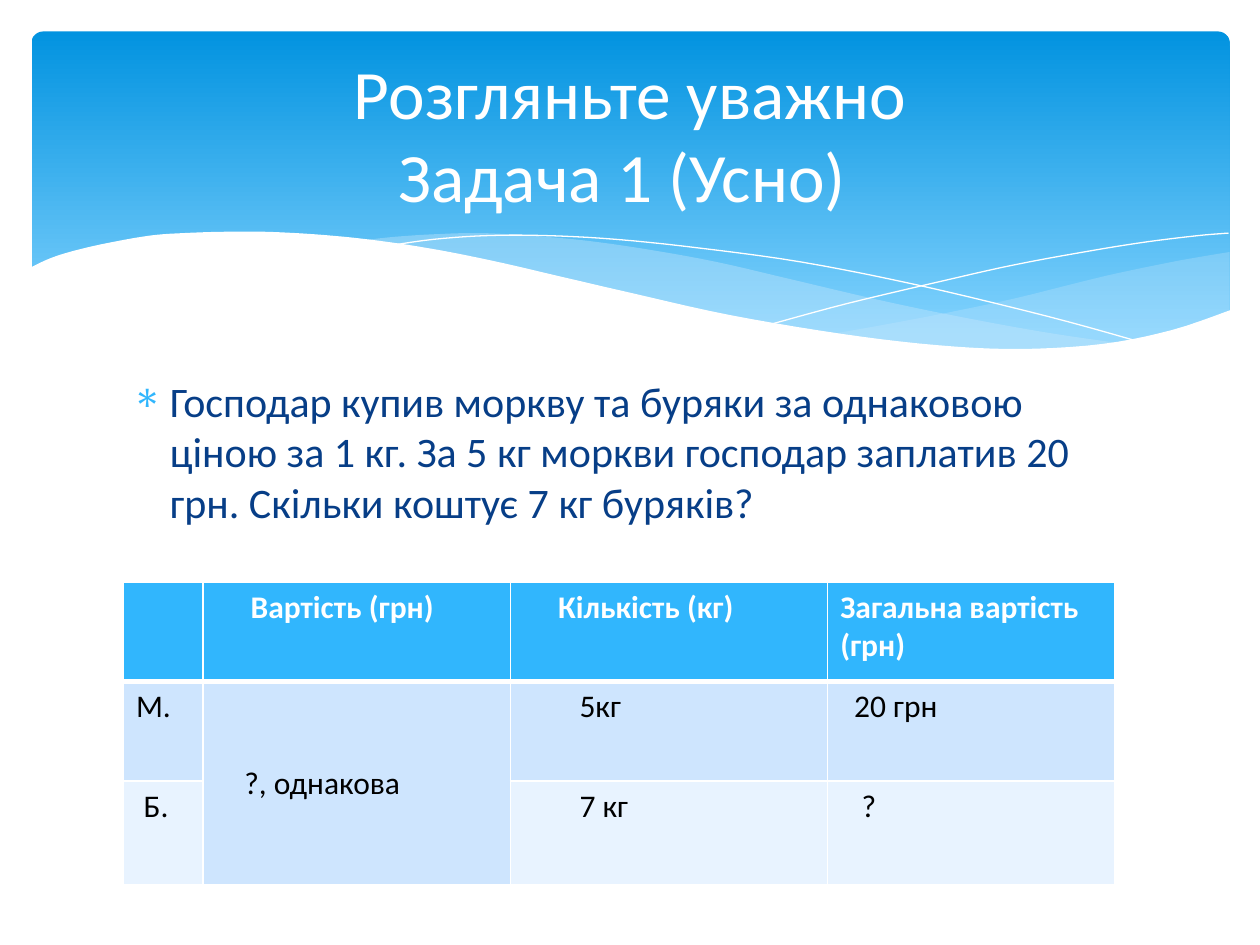
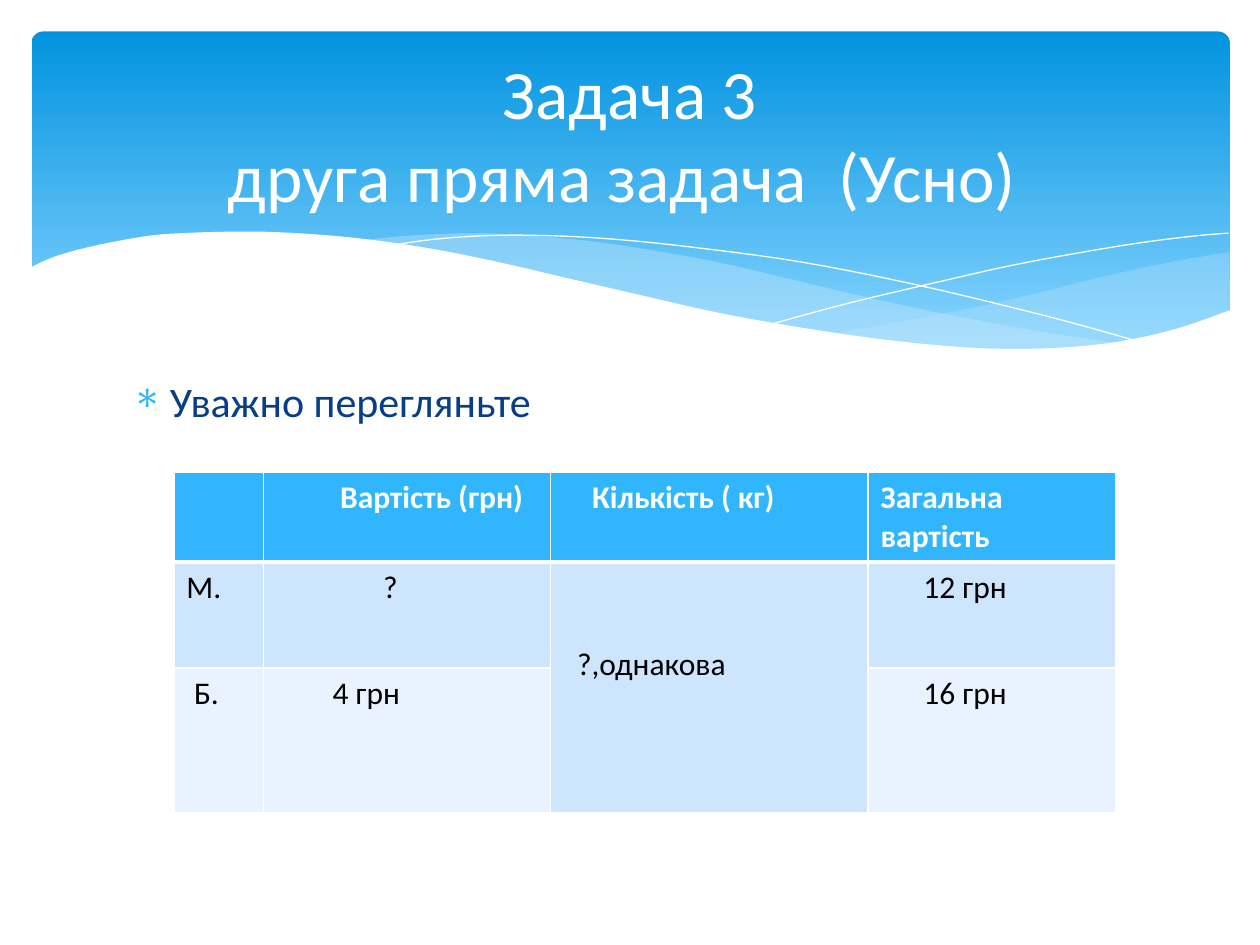
from dataclasses import dataclass
from itertools import chain

from lxml.etree import SubElement
from pptx import Presentation
from pptx.dml.color import RGBColor
from pptx.enum.shapes import MSO_SHAPE
from pptx.enum.text import MSO_ANCHOR, PP_ALIGN
from pptx.oxml.ns import qn
from pptx.util import Pt

EMU_PER_PX = 9144  # 100 px to the inch
TITLE_ONLY = 5
CELL_INSET = 10
SHARED_CELL_TOP = 66


@dataclass(frozen=True)
class Theme:
    font: str = "Calibri"
    title_size: float = 39.6
    body_size: int = 24
    table_size: int = 18
    white: str = "FFFFFF"
    black: str = "000000"
    band_top: str = "0293E0"
    band_bottom: str = "83D3FE"
    wave: str = "C6E7FC"
    body: str = "073E87"
    accent: str = "31B6FD"
    row_fills: tuple = ("31B6FD", "CEE5FE", "E8F3FF")


# Each outline is a list of edges; each edge is a list of knots in px.
RIGHT_WAVE = [
    [(976, 200), (935, 207), (891, 216), (861, 223), (805, 237), (753, 248),
     (706, 257), (661, 265)],
    [(661, 265), (705, 271), (745, 275), (781, 277), (824, 277), (863, 275),
     (897, 270), (928, 263), (963, 252), (976, 247)],
]
CENTRE_WAVE = [
    [(893, 273), (837, 265), (775, 254), (706, 240), (629, 222), (569, 208),
     (514, 198), (465, 191), (420, 187), (380, 185), (344, 186), (313, 188),
     (286, 191)],
    [(286, 191), (342, 199), (404, 211), (449, 222), (530, 240), (601, 255),
     (665, 266), (722, 274), (773, 277), (818, 278), (857, 277), (893, 273)],
]
FALLING_LINE = [
    [(309, 195), (344, 190), (387, 187), (433, 187), (489, 190), (556, 197),
     (636, 208), (727, 226), (831, 251), (907, 272)],
]
RISING_LINE = [
    [(613, 257), (672, 241), (748, 223), (806, 210), (866, 199), (910, 192),
     (951, 187), (975, 185)],
]
FRONT_WAVE = [
    [(977, 246), (930, 262), (875, 273), (809, 277), (744, 274), (668, 265),
     (579, 250), (503, 233), (447, 220), (391, 207), (340, 197), (292, 190),
     (250, 186), (211, 184), (177, 184), (146, 185), (119, 187), (85, 193),
     (59, 199), (40, 205), (23, 213)],
    [(23, 329), (977, 329)],
]


def px(length):
    return round(length * EMU_PER_PX)


def rgb(colour):
    return RGBColor.from_string(colour)


def smooth(knots, steps=5):
    """Return points of a Catmull-Rom curve through the knots, in EMU."""
    padded = [knots[0], *knots, knots[-1]]
    points = []
    for before, start, end, after in zip(padded, padded[1:], padded[2:], padded[3:]):
        for step in range(steps):
            t = step / steps
            points.append(tuple(
                px((2 * b + (c - a) * t + (2 * a - 5 * b + 4 * c - d) * t**2
                    + (3 * b - a - 3 * c + d) * t**3) / 2)
                for a, b, c, d in zip(before, start, end, after)))
    return points + [tuple(map(px, knots[-1]))]


class Deck:
    """Holds the theme and the slide being drawn."""

    def __init__(self, theme):
        self.theme = theme
        self.presentation = Presentation()
        self.presentation.slide_width = px(1000)
        self.presentation.slide_height = px(750)
        self.slide = None

    def new_slide(self, heading, task):
        layout = self.presentation.slide_layouts[TITLE_ONLY]
        self.slide = self.presentation.slides.add_slide(layout)
        self.band()
        self.body(task)
        self.title(heading)

    def style(self, paragraph, size, colour, bold=False):
        font = paragraph.font
        font.name, font.size, font.bold = self.theme.font, Pt(size), bold
        font.color.rgb = rgb(colour)

    def title(self, heading):
        title = self.slide.shapes.title
        self.slide.shapes.element.append(title.element)  # in front of the band
        title.left, title.top, title.width, title.height = map(px, (50, 37, 900, 137))
        frame = title.text_frame
        frame.text = heading
        frame.word_wrap = True
        frame.vertical_anchor = MSO_ANCHOR.MIDDLE
        paragraph = frame.paragraphs[0]
        paragraph.alignment = PP_ALIGN.CENTER
        self.style(paragraph, self.theme.title_size, self.theme.white)

    def body(self, task):
        frame = self.slide.shapes.add_textbox(*map(px, (95, 293, 810, 377))).text_frame
        frame.word_wrap = True
        paragraph = frame.paragraphs[0]
        paragraph.text = task
        paragraph.space_before = Pt(4.8)
        self.style(paragraph, self.theme.body_size, self.theme.body)
        properties = paragraph._p.get_or_add_pPr()
        properties.set("marL", str(px(30)))
        properties.set("indent", str(px(-30)))
        bullet_colour = SubElement(properties, qn("a:buClr"))
        SubElement(bullet_colour, qn("a:srgbClr"), val=self.theme.accent)
        SubElement(properties, qn("a:buChar"), char="∗")

    def band(self):
        theme = self.theme
        panel = self.slide.shapes.add_shape(
            MSO_SHAPE.ROUNDED_RECTANGLE, *map(px, (25, 25, 951, 270)))
        panel.adjustments[0] = 0.034
        panel.shadow.inherit = False
        panel.line.fill.background()
        panel.fill.gradient()
        panel.fill.gradient_angle = 270
        stops = zip(panel.fill.gradient_stops, (0, 0.9), (theme.band_top, theme.band_bottom))
        for stop, position, colour in stops:
            stop.position = position
            stop.color.rgb = rgb(colour)
        self.wave(RIGHT_WAVE, theme.wave, 29)
        self.wave(CENTRE_WAVE, theme.wave, 40)
        self.hairline(FALLING_LINE)
        self.hairline(RISING_LINE)
        self.wave(FRONT_WAVE, theme.white)

    def outline(self, edges, close):
        start, *points = chain.from_iterable(map(smooth, edges))
        builder = self.slide.shapes.build_freeform(*start, scale=1.0)
        builder.add_line_segments(points, close=close)
        shape = builder.convert_to_shape()
        shape.shadow.inherit = False
        return shape

    def wave(self, edges, colour, opacity=100):
        shape = self.outline(edges, close=True)
        shape.line.fill.background()
        shape.fill.solid()
        shape.fill.fore_color.rgb = rgb(colour)
        if opacity < 100:
            fill_colour = shape.element.spPr.find(qn("a:solidFill"))[0]
            SubElement(fill_colour, qn("a:alpha"), val=str(opacity * 1000))

    def hairline(self, edges):
        shape = self.outline(edges, close=False)
        shape.fill.background()
        shape.line.color.rgb = rgb(self.theme.white)
        shape.line.width = 0

    def table(self, left, top, widths, heights, rows, shared_column):
        """Draw rows of (text, indent) cells; the shared column spans both goods."""
        table = self.slide.shapes.add_table(
            len(rows), len(widths), px(left), px(top),
            px(sum(widths)), px(sum(heights))).table
        for column, width in zip(table.columns, widths):
            column.width = px(width)
        for row, height in zip(table.rows, heights):
            row.height = px(height)
        for r, row in enumerate(rows):
            for c, (text, indent) in enumerate(row):
                self.cell(table.cell(r, c), r, text, indent)
        shared = table.cell(1, shared_column)
        shared.merge(table.cell(2, shared_column))
        shared.margin_top = px(SHARED_CELL_TOP)

    def cell(self, cell, row, text, indent):
        header = row == 0
        cell.text = text
        cell.margin_left = px(CELL_INSET + indent)
        for paragraph in cell.text_frame.paragraphs:
            self.style(paragraph, self.theme.table_size,
                       self.theme.white if header else self.theme.black, bold=header)
        self.borders(cell, {"L": 1, "R": 1, "T": 3 if row == 1 else 1,
                            "B": 3 if header else 1})
        cell.fill.solid()
        cell.fill.fore_color.rgb = rgb(self.theme.row_fills[row])

    def borders(self, cell, widths):
        properties = cell._tc.get_or_add_tcPr()
        for side, width in widths.items():
            line = SubElement(properties, qn(f"a:ln{side}"), w=str(Pt(width)))
            fill = SubElement(line, qn("a:solidFill"))
            SubElement(fill, qn("a:srgbClr"), val=self.theme.white)


def main():
    deck = Deck(Theme())

    deck.new_slide(
        "Розгляньте уважно\vЗадача 1 (Усно) ",
        "Господар купив моркву та буряки за однаковою ціною за 1 кг. "
        "За 5 кг моркви господар заплатив 20 грн. Скільки коштує 7 кг буряків?")
    deck.table(
        98, 462, (63, 244, 252, 228), (79, 79, 82),
        [[("", 0), ("Вартість (грн)", 28), ("Кількість (кг)", 28),
          ("Загальна вартість\n(грн)", 0)],
         [("М.", 0), ("?, однакова", 23), ("5кг", 45), ("20 грн", 11)],
         [("Б.", 6), ("", 0), ("7 кг", 45), ("?", 17)]],
        shared_column=1)

    deck.new_slide("Задача 3\vдруга пряма задача  (Усно) ", "Уважно перегляньте")
    deck.table(
        138, 375, (71, 228, 252, 197), (71, 84, 115),
        [[("", 0), ("Вартість (грн)", 51), ("Кількість ( кг)", 23),
          ("Загальна вартість", 0)],
         [("М.", 0), ("?", 85), ("?,однакова", 11), ("12 грн", 34)],
         [("Б.", 6), ("4 грн", 45), ("", 0), ("16 грн", 34)]],
        shared_column=2)

    deck.presentation.save("out.pptx")


if __name__ == "__main__":
    main()
